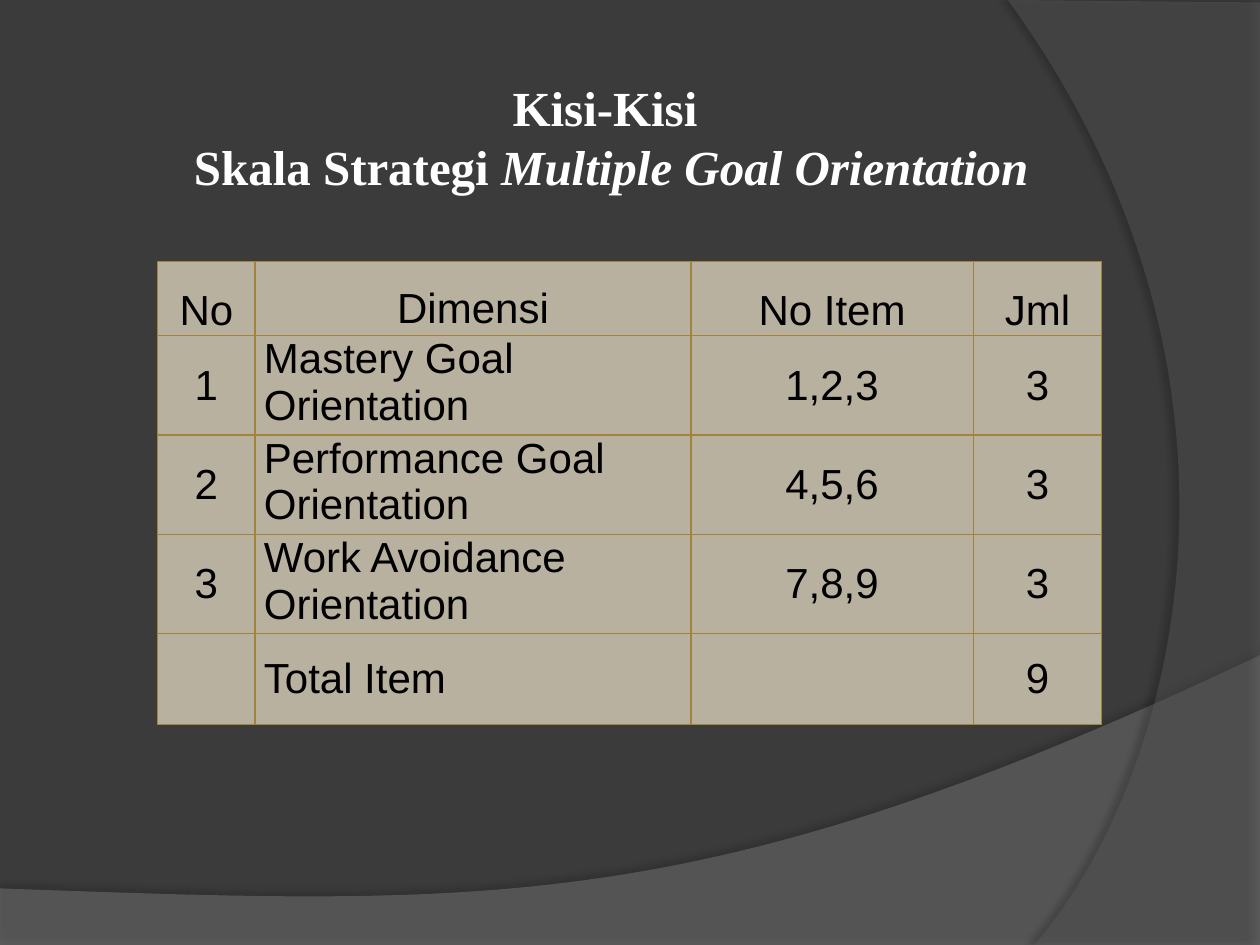
from lxml import etree
from pptx import Presentation
from pptx.dml.color import RGBColor
from pptx.enum.text import MSO_ANCHOR, MSO_AUTO_SIZE, PP_ALIGN
from pptx.oxml import parse_xml
from pptx.oxml.ns import nsdecls, qn
from pptx.util import Cm, Pt

LEFT, CENTER = PP_ALIGN.LEFT, PP_ALIGN.CENTER
TOP, MIDDLE = MSO_ANCHOR.TOP, MSO_ANCHOR.MIDDLE
DARK = RGBColor(0x3B, 0x3B, 0x3B)
GREY = RGBColor(0x7F, 0x7F, 0x7F)
SMOKE = RGBColor(0x5E, 0x5E, 0x5E)
SAND = RGBColor(0xB9, 0xB1, 0x9F)
GOLD = RGBColor(0xA1, 0x84, 0x3A)
WHITE = RGBColor(0xFF, 0xFF, 0xFF)
BLACK = RGBColor(0, 0, 0)

# Content: title lines as (text, italic) runs, then the table
TITLE = [
    [("Kisi-Kisi ", False)],
    [("Skala Strategi ", False), ("Multiple Goal Orientation", True)],
]
ROWS = [
    ("No", "Dimensi", "No Item", "Jml"),
    ("1", "Mastery Goal Orientation", "1,2,3", "3"),
    ("2", "Performance Goal Orientation", "4,5,6", "3"),
    ("3", "Work Avoidance Orientation", "7,8,9", "3"),
    ("", "Total Item", "", "9"),
]
WIDTHS = (1.96, 8.79, 5.69, 2.59)
HEIGHTS = (1.49, 2, 2, 2, 1.83)

# Backdrop in cm: Bezier curve, closing corners, fill, opacity %,
# shadow opacity %, shadow distance in points, shadow angle
WAVES = [
    (((25.4, 13.21), (14.2, 18.52), (9.93, 18.26), (0, 17.91)),
     [(0, 19.05), (25.4, 19.05)], GREY, 45, 35, 3.5, 270),
    (((20.85, 19.05), (23.75, 15.72), (25.86, 7.62), (20.32, 0)),
     [(25.4, 0.05), (25.4, 19.05)], SMOKE, 40, 45, 4, 180),
]


def trace(curve, steps=60):
    """Return points along a cubic Bezier curve."""
    a, b, c, d = curve
    points = []
    for n in range(steps + 1):
        t = n / steps
        u = 1 - t
        points.append(tuple(
            u**3 * a[i] + 3 * u * u * t * b[i] + 3 * u * t * t * c[i] + t**3 * d[i]
            for i in (0, 1)))
    return points


def add_wave(slide, curve, ends, color, alpha, shade, dist, angle):
    points = [(Cm(x), Cm(y)) for x, y in trace(curve) + ends]
    pen = slide.shapes.build_freeform(*points[0])
    pen.add_line_segments(points[1:], close=True)
    wave = pen.convert_to_shape()
    wave.fill.solid()
    wave.fill.fore_color.rgb = color
    wave.line.fill.background()
    tint = wave.fill._xPr.find(".//" + qn("a:srgbClr"))
    etree.SubElement(tint, qn("a:alpha"), val=str(alpha * 1000))
    wave._element.spPr.append(parse_xml(
        f'<a:effectLst {nsdecls("a")}><a:outerShdw blurRad="{Pt(4)}" '
        f'dist="{Pt(dist)}" dir="{angle * 60000}" rotWithShape="0">'
        f'<a:srgbClr val="000000"><a:alpha val="{shade * 1000}"/></a:srgbClr>'
        '</a:outerShdw></a:effectLst>'))


def set_cell(cell, text, row, col):
    cell.margin_left = cell.margin_right = Cm(0.18)
    cell.margin_top = cell.margin_bottom = 0
    # The second column sits at the top, except in the total row
    cell.vertical_anchor = TOP if col == 1 and row < len(ROWS) - 1 else MIDDLE
    for side in "LRTB":
        cell._tc.get_or_add_tcPr().append(parse_xml(
            f'<a:ln{side} {nsdecls("a")} w="{Pt(0.75)}"><a:solidFill>'
            f'<a:srgbClr val="{GOLD}"/></a:solidFill></a:ln{side}>'))
    cell.fill.solid()
    cell.fill.fore_color.rgb = SAND
    cell.text = text
    para = cell.text_frame.paragraphs[0]
    para.alignment = LEFT if col == 1 and row else CENTER
    para.line_spacing = 1.0 if row else 1.5
    font = para.font
    font.name, font.size, font.bold = "Arial", Pt(24), False
    font.color.rgb = BLACK


def add_title(slide):
    title = slide.shapes.title
    title.left, title.top = Cm(3.81), Cm(1.47)
    title.width, title.height = Cm(17.02), Cm(3.28)
    frame = title.text_frame
    frame.auto_size = MSO_AUTO_SIZE.NONE
    frame.word_wrap = False
    frame.vertical_anchor = TOP
    frame.margin_left = frame.margin_right = 0
    frame.margin_top = frame.margin_bottom = Cm(0.1)
    for n, runs in enumerate(TITLE):
        para = frame.add_paragraph() if n else frame.paragraphs[0]
        para.alignment = CENTER
        para.space_before = 0
        font = para.font
        font.name, font.size, font.bold = "Times New Roman", Pt(28), True
        font.color.rgb = WHITE
        for text, slant in runs:
            run = para.add_run()
            run.text = text
            run.font.italic = slant


def add_grid(slide):
    frame = slide.shapes.add_table(
        len(ROWS), len(WIDTHS), Cm(3.18), Cm(5.28),
        Cm(sum(WIDTHS)), Cm(sum(HEIGHTS)))
    table = frame.table
    table.first_row = table.horz_banding = False
    for col, width in zip(table.columns, WIDTHS):
        col.width = Cm(width)
    for row, height in zip(table.rows, HEIGHTS):
        row.height = Cm(height)
    for r, texts in enumerate(ROWS):
        for c, text in enumerate(texts):
            set_cell(table.cell(r, c), text, r, c)


def main():
    deck = Presentation()
    deck.slide_width, deck.slide_height = Cm(25.4), Cm(19.05)
    slide = deck.slides.add_slide(deck.slide_layouts[5])
    slide.background.fill.solid()
    slide.background.fill.fore_color.rgb = DARK
    for wave in WAVES:
        add_wave(slide, *wave)
    add_grid(slide)
    add_title(slide)
    deck.save("out.pptx")


if __name__ == "__main__":
    main()
